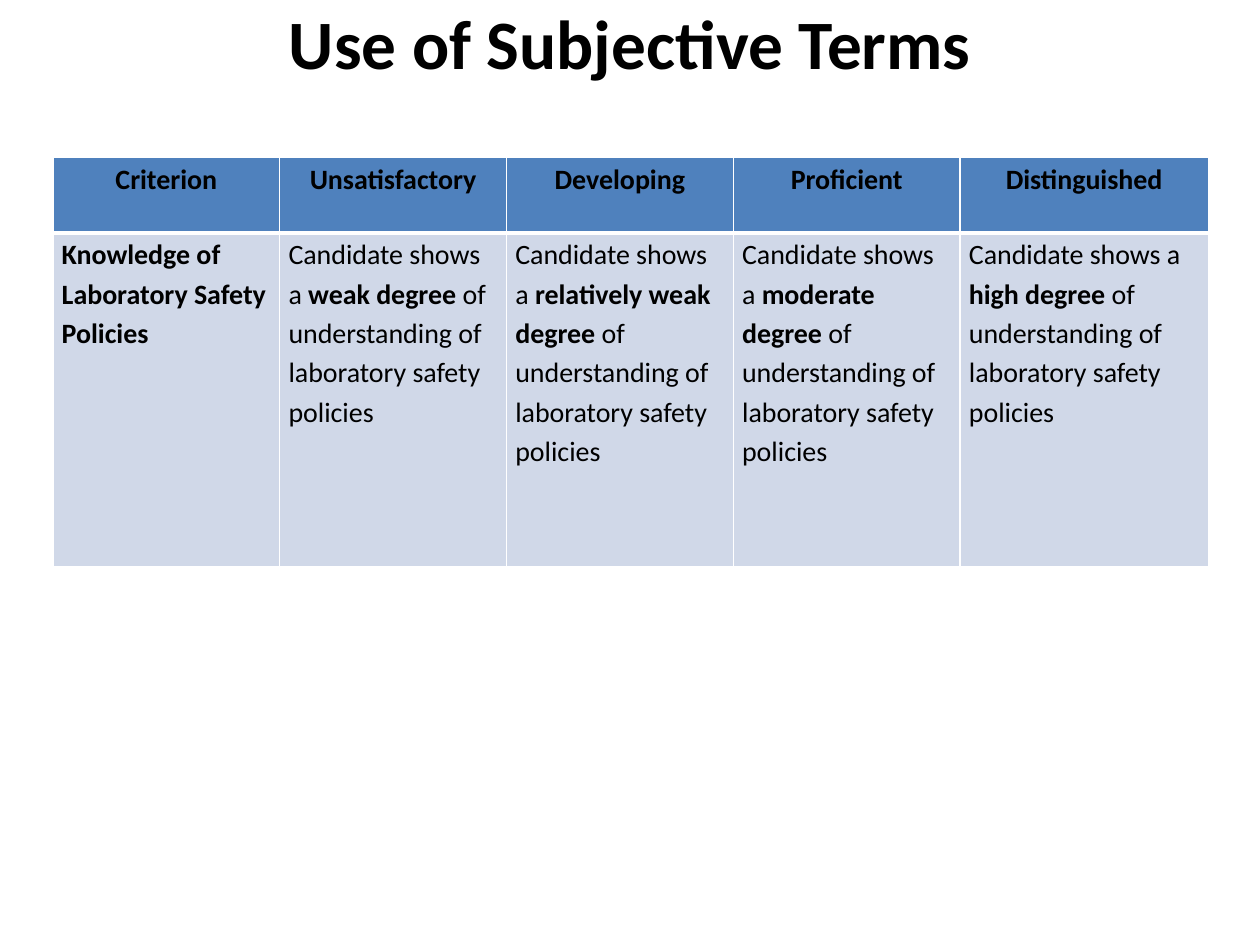
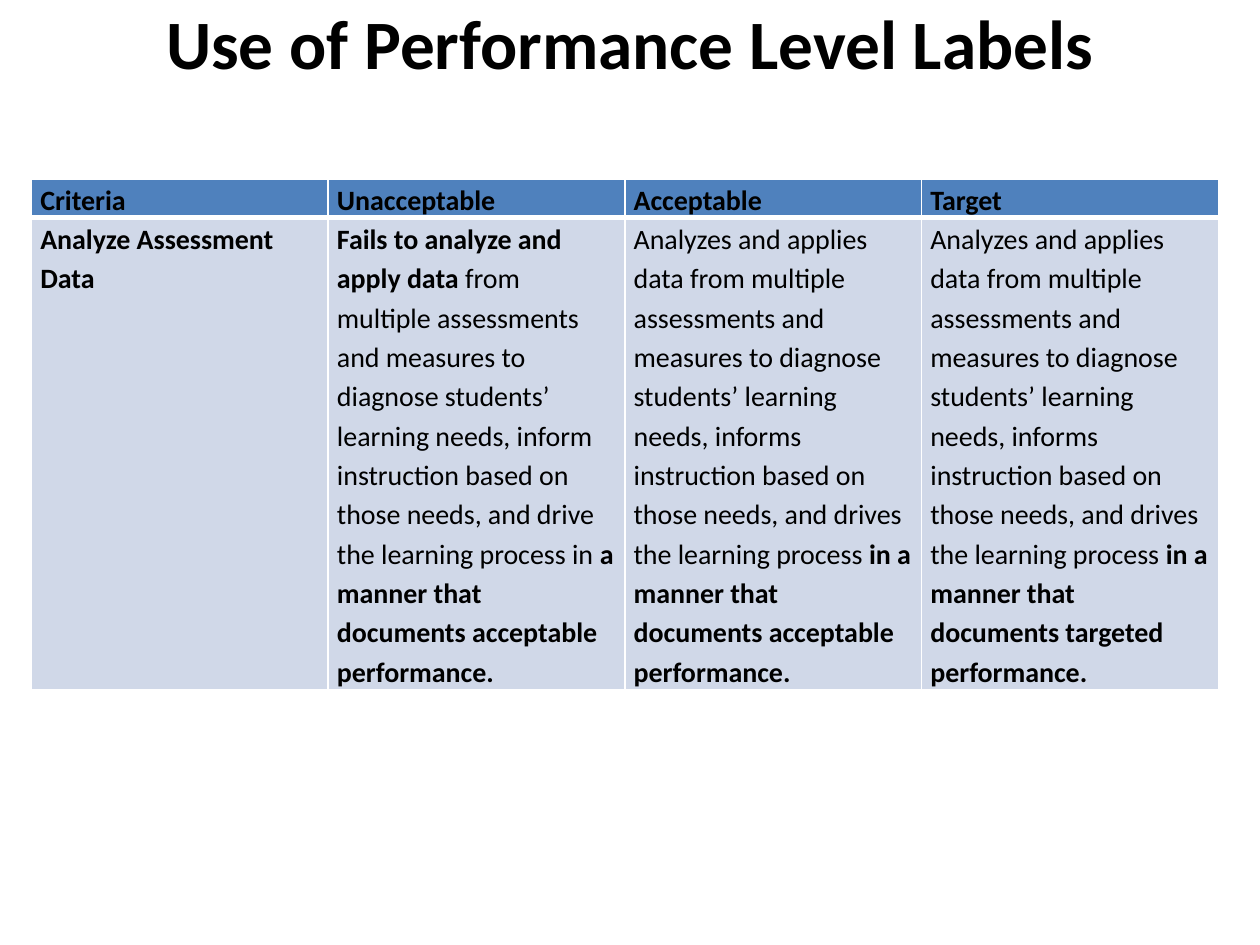
from lxml import etree
from pptx import Presentation
from pptx.dml.color import RGBColor
from pptx.enum.text import MSO_ANCHOR, PP_ALIGN
from pptx.oxml.ns import qn
from pptx.util import Inches, Pt

FONT = "Calibri"
COLORS = {"text": "000000", "header": "4F81BD", "body": "D0D8E8", "rule": "FFFFFF"}
THIN, THICK = 1, 3
DIAGNOSIS = ("Analyzes and applies data from multiple assessments and measures to diagnose "
             "students’ learning needs, informs instruction based on those needs, and drives "
             "the learning process ")

# Asterisks enclose the bold words of a cell
SUBJECTIVE_ROWS = [
    ["*Criterion*", "*Unsatisfactory*", "*Developing*", "*Proficient*", "*Distinguished*"],
    ["*Knowledge of Laboratory Safety Policies*",
     "Candidate shows a *weak degree* of understanding of laboratory safety policies"]
    + [f"Candidate shows a *{level} degree *of understanding of laboratory safety policies"
       for level in ("relatively weak", "moderate", "high")],
]
LABEL_ROWS = [
    ["*Criteria*", "*Unacceptable*", "*Acceptable*", "*Target*"],
    ["*Analyze Assessment Data*",
     "*Fails to analyze and apply data* from multiple assessments and measures to diagnose "
     "students’ learning needs, inform instruction based on those needs, and drive the "
     "learning process in *a manner that documents acceptable performance.*"]
    + [f"{DIAGNOSIS}*in a manner that documents {level} performance.*"
       for level in ("acceptable", "targeted")],
]


def style_font(font, size):
    font.name = FONT
    font.size = Pt(size)
    font.color.rgb = RGBColor.from_string(COLORS["text"])


def add_title(deck, page, text):
    margin = int(deck.slide_width * 0.05)
    box = page.shapes.add_textbox(margin, 0, deck.slide_width - 2 * margin, Inches(0.58))
    frame = box.text_frame
    frame.word_wrap = True
    frame.margin_top = frame.margin_bottom = 0
    frame.vertical_anchor = MSO_ANCHOR.TOP
    para = frame.paragraphs[0]
    para.text = text
    para.alignment = PP_ALIGN.CENTER
    style_font(para.font, 39.6)
    para.font.bold = True


def add_border(cell, side, width):
    line = etree.SubElement(cell._tc.get_or_add_tcPr(), qn(f"a:ln{side}"), w=str(Pt(width)))
    fill = etree.SubElement(line, qn("a:solidFill"))
    etree.SubElement(fill, qn("a:srgbClr"), val=COLORS["rule"])


def fill_cell(cell, text, is_header, alignment):
    cell.margin_left = cell.margin_right = Inches(0.07)
    cell.margin_top = cell.margin_bottom = 0
    # Borders come before the fill; the rule under the header is thick
    widths = {"L": THIN, "R": THIN,
              "T": THIN if is_header else THICK,
              "B": THICK if is_header else THIN}
    for side, width in widths.items():
        add_border(cell, side, width)
    cell.fill.solid()
    cell.fill.fore_color.rgb = RGBColor.from_string(COLORS["header" if is_header else "body"])

    para = cell.text_frame.paragraphs[0]
    para.alignment = alignment
    para.line_spacing = 1.15
    for index, words in enumerate(text.split("*")):
        if words:
            span = para.add_run()
            span.text = words
            style_font(span.font, 16)
            span.font.bold = index % 2 == 1


def add_rubric(page, left, top, column_widths, row_heights, rows, header_alignment):
    table = page.shapes.add_table(
        len(rows), len(column_widths), Inches(left), Inches(top),
        Inches(sum(column_widths)), Inches(sum(row_heights))).table
    for column, width in zip(table.columns, column_widths):
        column.width = Inches(width)
    for row, height in zip(table.rows, row_heights):
        row.height = Inches(height)
    for row_index, texts in enumerate(rows):
        is_header = row_index == 0
        alignment = header_alignment if is_header else PP_ALIGN.LEFT
        for column_index, text in enumerate(texts):
            fill_cell(table.cell(row_index, column_index), text, is_header, alignment)


def add_page(deck, title):
    page = deck.slides.add_slide(deck.slide_layouts[6])
    add_title(deck, page, title)
    return page


def main():
    deck = Presentation()
    deck.slide_width, deck.slide_height = Inches(10), Inches(7.5)

    # Vague wording in the level descriptions
    page = add_page(deck, "Use of Subjective Terms")
    add_rubric(page, 0.42, 1.25, [1.8] * 4 + [1.97], [0.6, 2.65],
               SUBJECTIVE_ROWS, PP_ALIGN.CENTER)

    # Level names repeated in the descriptions
    page = add_page(deck, "Use of Performance Level Labels")
    add_rubric(page, 0.25, 1.42, [2.355] * 4, [0.3, 3.75], LABEL_ROWS, PP_ALIGN.LEFT)

    deck.save("out.pptx")


if __name__ == "__main__":
    main()
